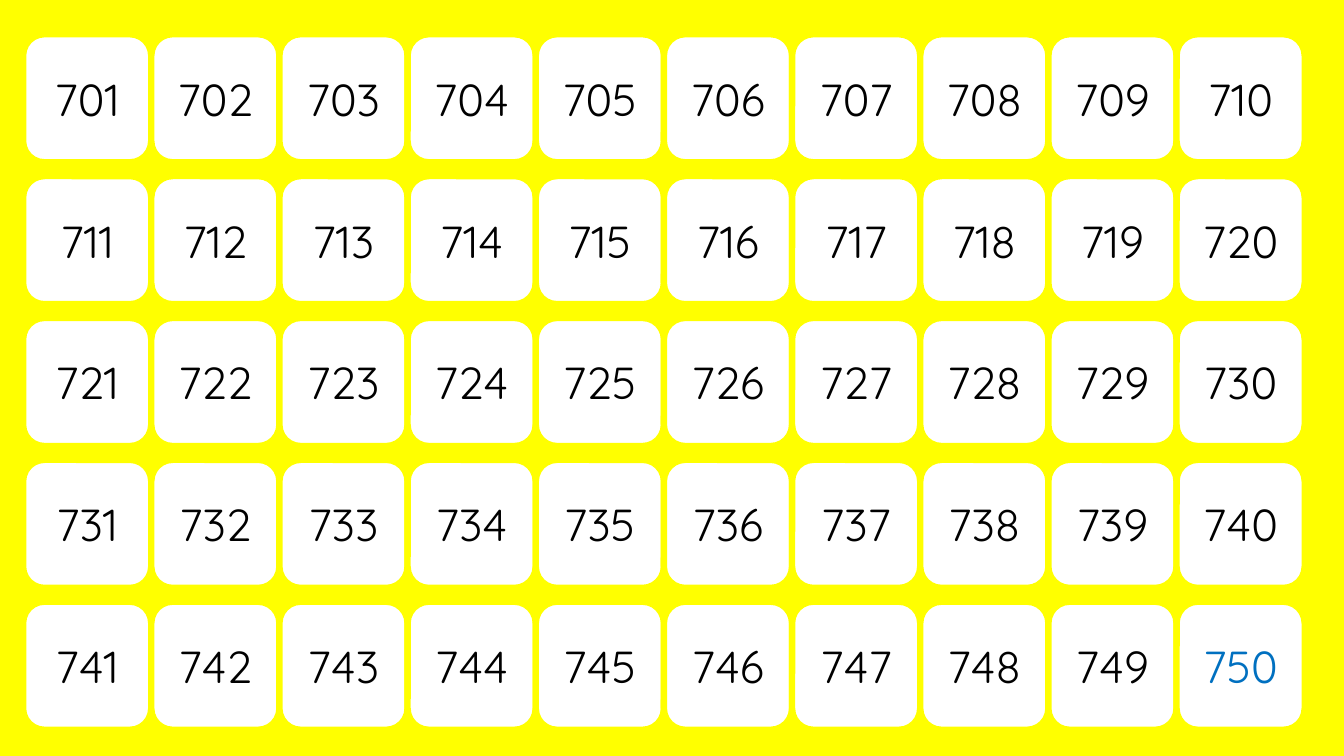
from pptx import Presentation
from pptx.dml.color import RGBColor
from pptx.enum.shapes import MSO_SHAPE
from pptx.enum.text import MSO_ANCHOR, PP_ALIGN
from pptx.util import Inches, Pt

ROUNDED = MSO_SHAPE.ROUNDED_RECTANGLE
MIDDLE = MSO_ANCHOR.MIDDLE
CENTER = PP_ALIGN.CENTER

YELLOW = RGBColor(0xFF, 0xFF, 0x00)
WHITE = RGBColor(0xFF, 0xFF, 0xFF)
BLACK = RGBColor(0x00, 0x00, 0x00)
BLUE = RGBColor(0x00, 0x70, 0xC0)

FIRST, LAST = 701, 750
COLUMNS, ROWS = 10, 5

# Grid in inches: the pitch spreads the cards evenly from first to last
CARD_SIZE = 1.27
FIRST_LEFT, LAST_LEFT = 0.23, 11.67
FIRST_TOP, LAST_TOP = 0.34, 5.97
COLUMN_PITCH = (LAST_LEFT - FIRST_LEFT) / (COLUMNS - 1)
ROW_PITCH = (LAST_TOP - FIRST_TOP) / (ROWS - 1)

presentation = Presentation()
presentation.slide_width = Inches(13.33)
presentation.slide_height = Inches(7.5)
BLANK_LAYOUT = presentation.slide_layouts[6]
slide = presentation.slides.add_slide(BLANK_LAYOUT)
slide.background.fill.solid()
slide.background.fill.fore_color.rgb = YELLOW

for number in range(FIRST, LAST + 1):
    row, column = divmod(number - FIRST, COLUMNS)
    card = slide.shapes.add_shape(
        ROUNDED,
        Inches(FIRST_LEFT + column * COLUMN_PITCH),
        Inches(FIRST_TOP + row * ROW_PITCH),
        Inches(CARD_SIZE),
        Inches(CARD_SIZE),
    )
    card.shadow.inherit = False
    card.fill.solid()
    card.fill.fore_color.rgb = WHITE
    card.line.color.rgb = YELLOW
    card.line.width = Pt(4.5)

    card.text_frame.vertical_anchor = MIDDLE
    label = card.text_frame.paragraphs[0]
    label.text = str(number)
    label.alignment = CENTER
    label.font.name = "Quicksand"
    label.font.size = Pt(32)
    label.font.color.rgb = BLUE if number == LAST else BLACK

presentation.save("out.pptx")
